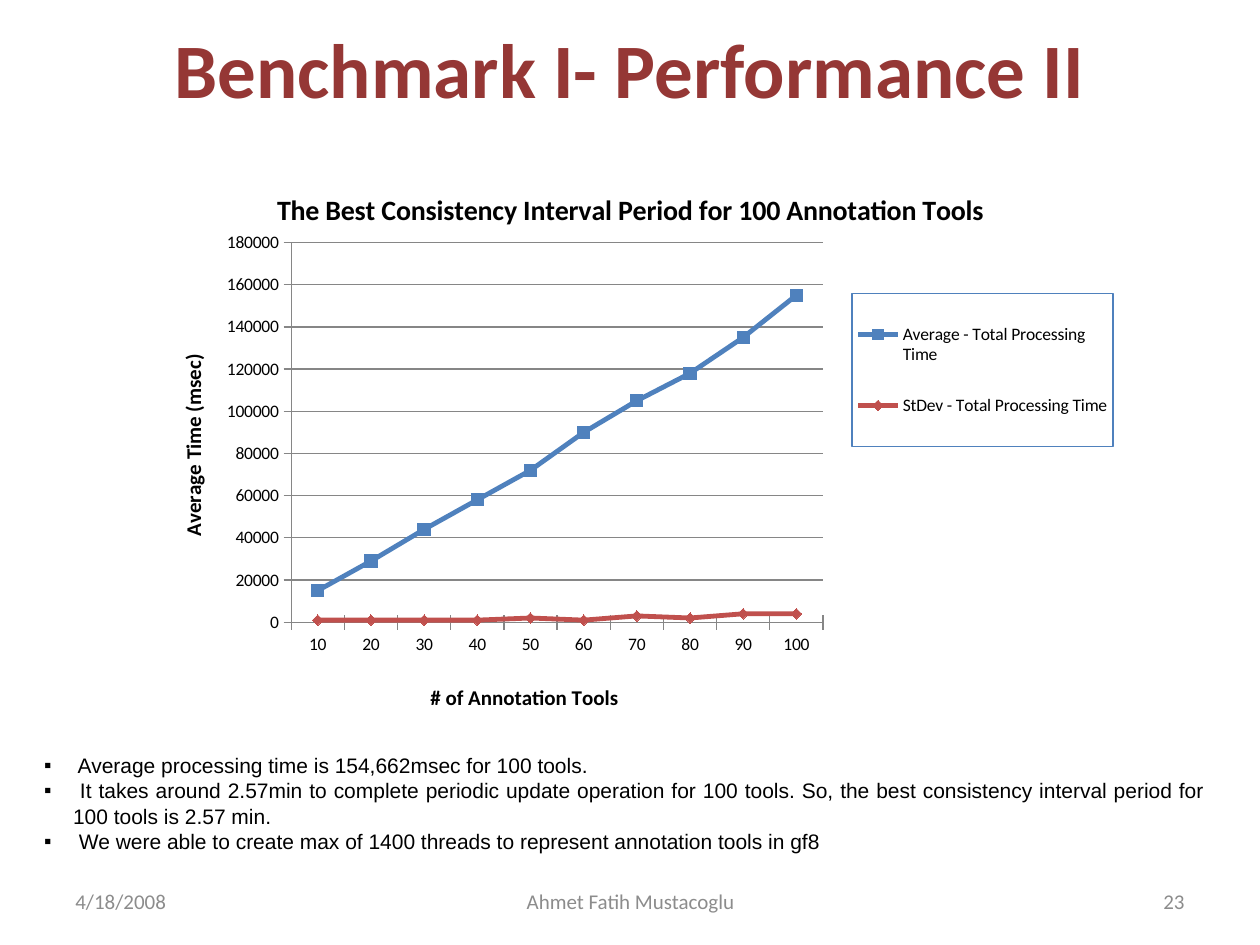
from lxml import etree
from pptx import Presentation
from pptx import util as u
from pptx.chart.data import CategoryChartData
from pptx.dml.color import RGBColor
from pptx.enum import chart as ch
from pptx.enum import text as t
from pptx.oxml import parse_xml
from pptx.oxml.ns import nsdecls, qn

GREY, BLACK, AXIS = "8C8C8C", "000000", "868686"
BULLETS = [
    " Average processing time is 154,662msec for 100 tools. ",
    " It takes around 2.57min to complete periodic update operation for 100 tools. "
    "So, the best consistency interval period for 100 tools is 2.57 min.",
    " We were able to create max of 1400 threads to represent annotation tools in gf8",
]
# name, values in thousands of msec, colour, marker, marker size
SERIES = [
    ("Average - Total Processing Time", [15, 29, 44, 58, 72, 90, 105, 118, 135, 155],
     "4F81BD", ch.XL_MARKER_STYLE.SQUARE, 7),
    ("StDev - Total Processing Time", [1, 1, 1, 1, 2, 1, 3, 2, 4, 4],
     "C0504D", ch.XL_MARKER_STYLE.DIAMOND, 6),
]


def colour(hex_code):
    return RGBColor.from_string(hex_code)


def set_font(font, size, hex_code, name="Calibri", bold=False):
    font.size, font.name, font.bold = u.Pt(size), name, bold
    font.color.rgb = colour(hex_code)


def place(shape, left, top, width, height):
    shape.left, shape.top = u.Inches(left), u.Inches(top)
    shape.width, shape.height = u.Inches(width), u.Inches(height)


def fill_title(title):
    place(title, 0.5, 0, 9, 1.08)
    frame = title.text_frame
    frame.text = "Benchmark I- Performance II"
    frame.vertical_anchor = t.MSO_ANCHOR.MIDDLE
    frame.paragraphs[0].alignment = t.PP_ALIGN.CENTER
    set_font(frame.paragraphs[0].runs[0].font, 44, "953735", bold=True)


def add_bullet(para, char="▪"):
    props = para._p.get_or_add_pPr()
    props.set("marL", str(u.Inches(0.23)))
    props.set("indent", str(-u.Inches(0.23)))
    etree.SubElement(props, qn("a:buFont")).set("typeface", "Arial")
    etree.SubElement(props, qn("a:buChar")).set("char", char)


def fill_list(body, lines):
    place(body, 0.25, 5.92, 9.42, 0.91)
    frame = body.text_frame
    frame.text = "\n".join(lines)
    frame.auto_size = t.MSO_AUTO_SIZE.NONE
    for para in frame.paragraphs:
        para.alignment = t.PP_ALIGN.JUSTIFY
        para.space_before = u.Pt(0)
        para.line_spacing = u.Pt(14.5)
        add_bullet(para)
        set_font(para.runs[0].font, 12, BLACK, "Arial")


def add_footer(page, words, left, width, alignment):
    box = page.shapes.add_textbox(0, 0, 0, 0)
    place(box, left, 6.95, width, 0.4)
    frame = box.text_frame
    frame.word_wrap = True
    frame.vertical_anchor = t.MSO_ANCHOR.MIDDLE
    frame.text = words
    frame.paragraphs[0].alignment = alignment
    set_font(frame.paragraphs[0].runs[0].font, 12, GREY)


def set_layout(element, index, x, y, width=None, height=None):
    """Fix a chart part at fractions of the chart area."""
    for old in element.findall(qn("c:layout")):
        element.remove(old)
    layout = parse_xml(f"<c:layout {nsdecls('c')}><c:manualLayout/></c:layout>")
    values = [("xMode", "edge"), ("yMode", "edge"), ("x", x), ("y", y)]
    if width:
        values += [("w", width), ("h", height)]
    if element.tag == qn("c:plotArea"):
        values.insert(0, ("layoutTarget", "inner"))
    for tag, value in values:
        etree.SubElement(layout[0], qn(f"c:{tag}")).set("val", str(value))
    element.insert(index, layout)


def set_chart_title(title, words, size, x, y):
    title.text_frame.text = words
    set_font(title.text_frame.paragraphs[0].runs[0].font, size, BLACK, bold=True)
    set_layout(title._element, 1, x, y)


def style_axis(axis, words, x, y):
    axis.has_title = True
    set_chart_title(axis.axis_title, words, 12, x, y)
    axis.major_tick_mark = ch.XL_TICK_MARK.CROSS
    axis.format.line.color.rgb = colour(AXIS)
    set_font(axis.tick_labels.font, 10, BLACK)


def style_legend(chart):
    chart.has_legend = True
    legend = chart.legend
    legend.position = ch.XL_LEGEND_POSITION.RIGHT
    legend.include_in_layout = False
    set_font(legend.font, 10, BLACK)
    set_layout(legend._element, 1, 0.73, 0.24, 0.27, 0.27)
    border = parse_xml(
        f'<c:spPr {nsdecls("c", "a")}><a:ln w="9525"><a:solidFill>'
        '<a:srgbClr val="4F81BD"/></a:solidFill></a:ln></c:spPr>')
    legend._element.find(qn("c:txPr")).addprevious(border)


def style_series(series, hex_code, marker, size):
    series.smooth = False
    series.format.line.width = u.Pt(2.75)
    series.format.line.color.rgb = colour(hex_code)
    series.marker.style, series.marker.size = marker, size
    series.marker.format.fill.solid()
    series.marker.format.fill.fore_color.rgb = colour(hex_code)
    series.marker.format.line.color.rgb = colour(hex_code)


def add_line_chart(page):
    data = CategoryChartData()
    data.categories = [str(count) for count in range(10, 101, 10)]
    for name, thousands, *_ in SERIES:
        data.add_series(name, [value * 1000 for value in thousands])
    frame = page.shapes.add_chart(
        ch.XL_CHART_TYPE.LINE_MARKERS, u.Inches(1.16), u.Inches(1.25),
        u.Inches(7.68), u.Inches(4.5), data)
    chart = frame.chart
    set_font(chart.font, 10, BLACK)
    chart.has_title = True
    set_chart_title(chart.chart_title,
                    "The Best Consistency Interval Period for 100 Annotation Tools",
                    16, 0.13, 0.05)
    style_axis(chart.category_axis, "# of Annotation Tools", 0.29, 0.92)
    values = chart.value_axis
    style_axis(values, "Average Time (msec)", 0.03, 0.34)
    values.minimum_scale, values.maximum_scale, values.major_unit = 0, 180000, 20000
    values.major_gridlines.format.line.color.rgb = colour(AXIS)
    style_legend(chart)

    plot = chart.plots[0]
    plot.vary_by_categories = False
    set_layout(plot._element.getparent(), 0, 0.15, 0.15, 0.55, 0.67)
    for series, (_, _, *look) in zip(plot.series, SERIES):
        style_series(series, *look)


def main():
    deck = Presentation()
    deck.slide_width, deck.slide_height = u.Inches(10), u.Inches(7.5)
    page = deck.slides.add_slide(deck.slide_layouts[1])
    fill_title(page.shapes.title)
    fill_list(page.placeholders[1], BULLETS)
    add_footer(page, "23", 7.17, 2.33, t.PP_ALIGN.RIGHT)
    add_footer(page, "4/18/2008", 0.5, 2.33, t.PP_ALIGN.LEFT)
    add_footer(page, "Ahmet Fatih Mustacoglu", 3.42, 3.17, t.PP_ALIGN.CENTER)
    add_line_chart(page)
    deck.save("out.pptx")


if __name__ == "__main__":
    main()
